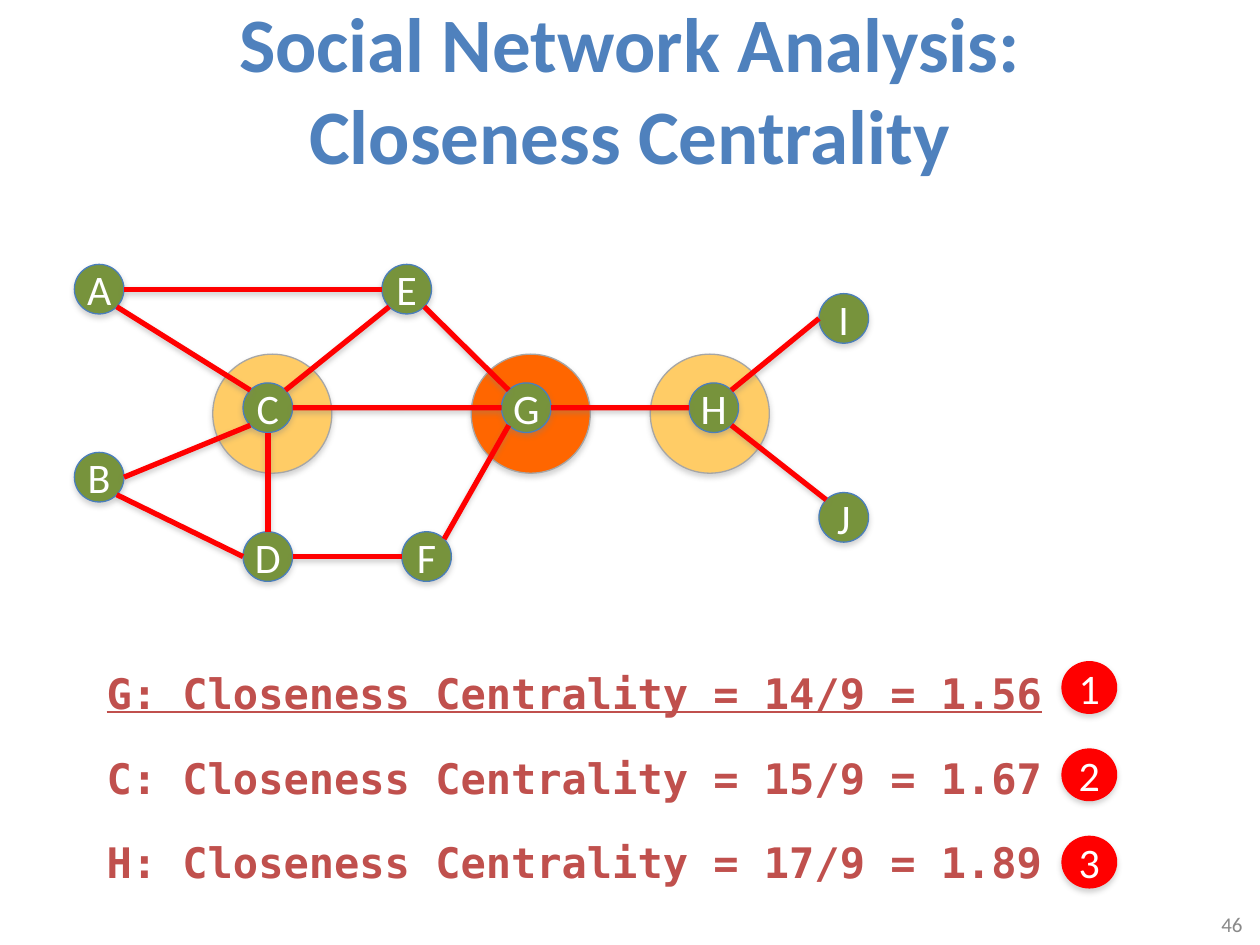
"""Build a slide on closeness centrality in a social network."""
from math import cos, radians, sin

from pptx import Presentation
from pptx.dml.color import RGBColor
from pptx.enum.shapes import MSO_CONNECTOR, MSO_SHAPE
from pptx.enum.text import MSO_ANCHOR, PP_ALIGN
from pptx.oxml import parse_xml
from pptx.oxml.ns import nsdecls
from pptx.util import Cm, Pt

OVAL = MSO_SHAPE.OVAL
LINE = MSO_CONNECTOR.STRAIGHT
TOP, MIDDLE = MSO_ANCHOR.TOP, MSO_ANCHOR.MIDDLE
LEFT, CENTER, RIGHT = PP_ALIGN.LEFT, PP_ALIGN.CENTER, PP_ALIGN.RIGHT

WHITE = RGBColor(0xFF, 0xFF, 0xFF)
BLUE = RGBColor(0x4F, 0x81, 0xBD)
RIM = RGBColor(0x4A, 0x7E, 0xBB)
GREEN = RGBColor(0x77, 0x93, 0x3C)
GOLD = RGBColor(0xFF, 0xCC, 0x66)
ORANGE = RGBColor(0xFF, 0x66, 0x00)
RED = RGBColor(0xFF, 0x00, 0x00)
BRICK = RGBColor(0xC0, 0x50, 0x4D)
SILVER = RGBColor(0xA6, 0xA6, 0xA6)
GRAY = RGBColor(0x89, 0x89, 0x89)

SHADOW = (
    "<a:effectLst %s>"
    '<a:outerShdw blurRad="40000" dist="%d" dir="5400000" rotWithShape="0">'
    '<a:srgbClr val="808080"><a:alpha val="%d"/></a:srgbClr>'
    "</a:outerShdw></a:effectLst>"
)

deck = Presentation()
deck.slide_width, deck.slide_height = Cm(25.4), Cm(19.05)
slide = deck.slides.add_slide(deck.slide_layouts[6])
shapes = slide.shapes
discs, lines = [], []


def write(shape, text, size, color, align=CENTER, anchor=MIDDLE,
          font="Calibri", bold=False, under=False):
    frame = shape.text_frame
    frame.text = text
    frame.word_wrap = True
    frame.vertical_anchor = anchor
    para = frame.paragraphs[0]
    para.alignment = align
    for run in para.runs:
        run.font.name = font
        run.font.size = Pt(size)
        run.font.color.rgb = color
        run.font.bold = bold
        run.font.underline = under


def disc(left, top, width, height, fill, edge, text=""):
    shape = shapes.add_shape(OVAL, Cm(left), Cm(top), Cm(width), Cm(height))
    shape.fill.solid()
    shape.fill.fore_color.rgb = fill
    shape.line.color.rgb = edge
    shape.line.width = Pt(0.75)
    discs.append(shape)
    if text:
        frame = shape.text_frame
        frame.margin_left = frame.margin_right = 0
        frame.margin_top = frame.margin_bottom = 0
        write(shape, text, 24, WHITE)


for left, fill in ((4.29, GOLD), (9.5, ORANGE), (13.11, GOLD)):
    disc(left, 7.14, 2.4, 2.4, fill, SILVER)

page = shapes.add_textbox(Cm(19.38), Cm(18.11), Cm(5.92), Cm(1.02))
write(page, "46", 12, GRAY, RIGHT)

title = shapes.add_textbox(Cm(1.27), Cm(0), Cm(22.86), Cm(3.53))
write(title, "Social Network Analysis:\vCloseness Centrality", 44, BLUE, bold=True)

SIZE = 1
NODES = {
    "A": (1.5, 5.33), "B": (1.5, 9.12), "D": (4.9, 10.72), "C": (4.9, 7.72),
    "E": (7.7, 5.33), "F": (8.1, 10.72), "G": (10.11, 7.72),
    "H": (13.89, 7.72), "I": (16.51, 5.92), "J": (16.51, 9.93),
}
for name, (left, top) in NODES.items():
    disc(left, top, SIZE, SIZE, GREEN, RIM, name)

SITES = ("N", "NW", "W", "SW", "S", "SE", "E", "NE")
EDGES = (
    ("C", "E", "G", "W"), ("C", "NE", "E", "SW"), ("C", "NW", "A", "SE"),
    ("C", "SW", "B", "E"), ("D", "W", "B", "SE"), ("D", "N", "C", "S"),
    ("D", "E", "F", "W"), ("F", "NE", "G", "SW"), ("G", "NW", "E", "SE"),
    ("A", "E", "E", "W"), ("G", "E", "H", "W"), ("H", "NE", "I", "W"),
    ("H", "SE", "J", "NW"),
)
for start, out, end, into in EDGES:
    ends = []
    for name, site in ((start, out), (end, into)):
        turn = radians(45 * SITES.index(site))
        left, top = NODES[name]
        ends += [Cm(left + SIZE / 2 * (1 - sin(turn))),
                 Cm(top + SIZE / 2 * (1 - cos(turn)))]
    line = shapes.add_connector(LINE, *ends)
    line.line.color.rgb = RED
    line.line.width = Pt(3)
    lines.append(line)

SCORES = ("G: Closeness Centrality = 14/9 = 1.56",
          "C: Closeness Centrality = 15/9 = 1.67",
          "H: Closeness Centrality = 17/9 = 1.89")
for row, score in enumerate(SCORES):
    box = shapes.add_textbox(Cm(1.9), Cm(13.34 + 1.7 * row), Cm(20.6), Cm(1.3))
    write(box, score, 24, BRICK, LEFT, TOP, "DejaVu Sans Mono", True, row == 0)
for row in range(len(SCORES)):
    disc(21.41, 13.34 + 1.76 * row, 1.1, 1.04, RED, RED, str(row + 1))

for group, drop, alpha in ((discs, 23000, 35000), (lines, 20000, 38000)):
    for shape in group:
        shade = parse_xml(SHADOW % (nsdecls("a"), drop, alpha))
        shape._element.spPr.append(shade)

deck.save("out.pptx")
